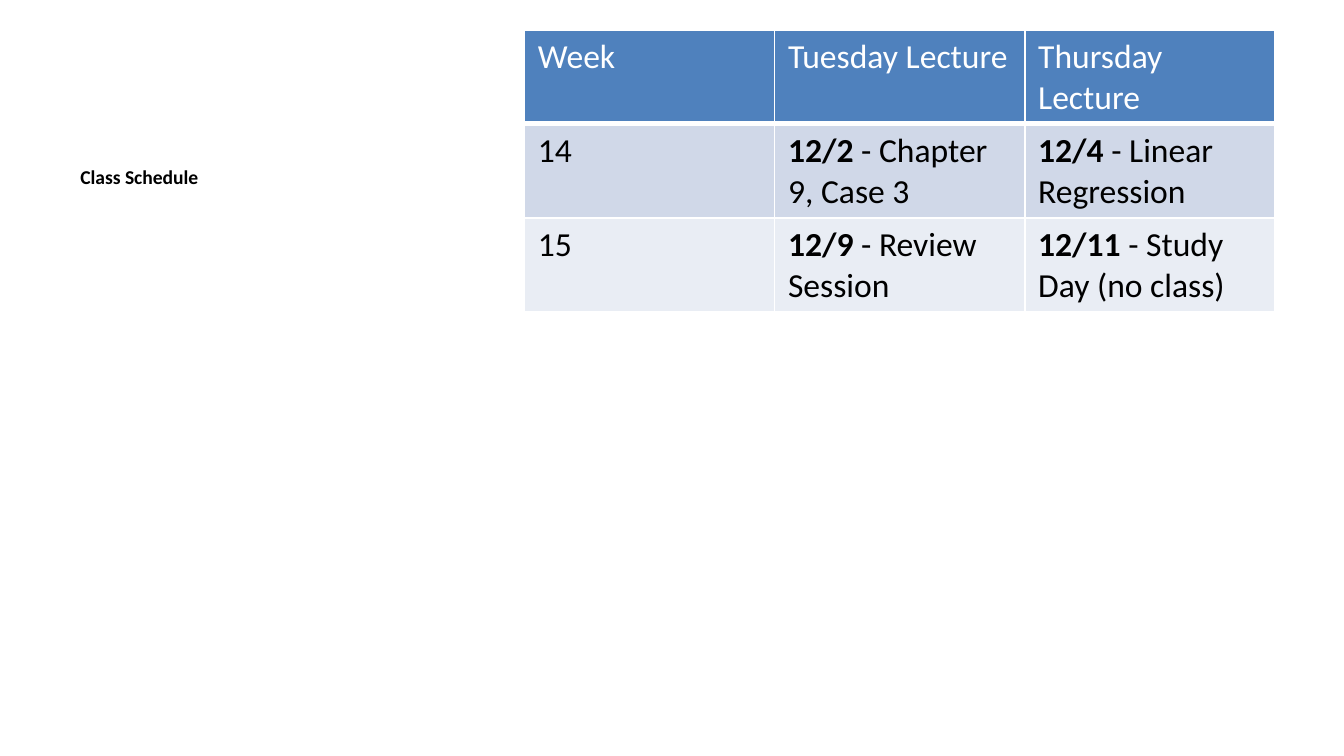
from lxml import etree
from pptx import Presentation
from pptx.dml.color import RGBColor
from pptx.oxml import ns
from pptx.util import Pt

FONT = "Calibri"
COLORS = {
    "text": "000000",
    "header_text": "FFFFFF",
    "header": "4F81BD",
    "odd_row": "D0D8E8",
    "even_row": "E9EDF4",
    "border": "FFFFFF",
}
HEADINGS = ["Week", "Tuesday Lecture", "Thursday Lecture"]
WEEKS = [
    [("", "14"), ("12/2", " - Chapter 9, Case 3"), ("12/4", " - Linear Regression")],
    [("", "15"), ("12/9", " - Review Session"), ("12/11", " - Study Day (no class)")],
]


def add_run(paragraph, wording, size, color, bold=False):
    """Append one formatted run to a paragraph."""
    run = paragraph.add_run()
    run.text = wording
    run.font.name = FONT
    run.font.size = Pt(size)
    run.font.bold = bold
    run.font.color.rgb = RGBColor.from_string(COLORS[color])


def set_borders(cell, bottom):
    """Draw the four cell borders, with the bottom one at its own width."""
    properties = cell._tc.get_or_add_tcPr()
    widths = {"a:lnL": 1, "a:lnR": 1, "a:lnT": 1, "a:lnB": bottom}
    for position, (tag, width) in enumerate(widths.items()):
        line = etree.Element(ns.qn(tag), w=str(Pt(width)))
        fill = etree.SubElement(line, ns.qn("a:solidFill"))
        etree.SubElement(fill, ns.qn("a:srgbClr"), val=COLORS["border"])
        properties.insert(position, line)


def fill_cell(cell, date, topic, fill, color, bottom):
    """Write a bold date and a topic into a filled, bordered cell."""
    paragraph = cell.text_frame.paragraphs[0]
    if date:
        add_run(paragraph, date, 18, color, bold=True)
    add_run(paragraph, topic, 18, color)
    cell.fill.solid()
    cell.fill.fore_color.rgb = RGBColor.from_string(COLORS[fill])
    set_borders(cell, bottom)


def add_heading(slide, left, top, width, height):
    """Place the schedule heading in the given box."""
    heading = slide.shapes.add_textbox(Pt(left), Pt(top), Pt(width), Pt(height))
    heading.text_frame.word_wrap = True
    paragraph = heading.text_frame.paragraphs[0]
    paragraph.space_before = Pt(30)
    add_run(paragraph, "Class Schedule", 10.5, "text", bold=True)


def add_schedule(slide, left, top, width, height):
    """Place the lecture table in the given box."""
    schedule = slide.shapes.add_table(
        len(WEEKS) + 1, len(HEADINGS), Pt(left), Pt(top), Pt(width), Pt(height)
    ).table
    for column, heading in enumerate(HEADINGS):
        fill_cell(schedule.cell(0, column), "", heading, "header", "header_text", 3)
    for row, week in enumerate(WEEKS, start=1):
        band = "odd_row" if row % 2 else "even_row"
        for column, (date, topic) in enumerate(week):
            fill_cell(schedule.cell(row, column), date, topic, band, "text", 1)


def main():
    """Build and save the class schedule slide."""
    deck = Presentation()
    deck.slide_width, deck.slide_height = Pt(720), Pt(405)
    slide = deck.slides.add_slide(deck.slide_layouts[6])
    add_heading(slide, 36, 85, 237, 277)
    add_schedule(slide, 281, 16, 402, 103)
    deck.save("out.pptx")


if __name__ == "__main__":
    main()
